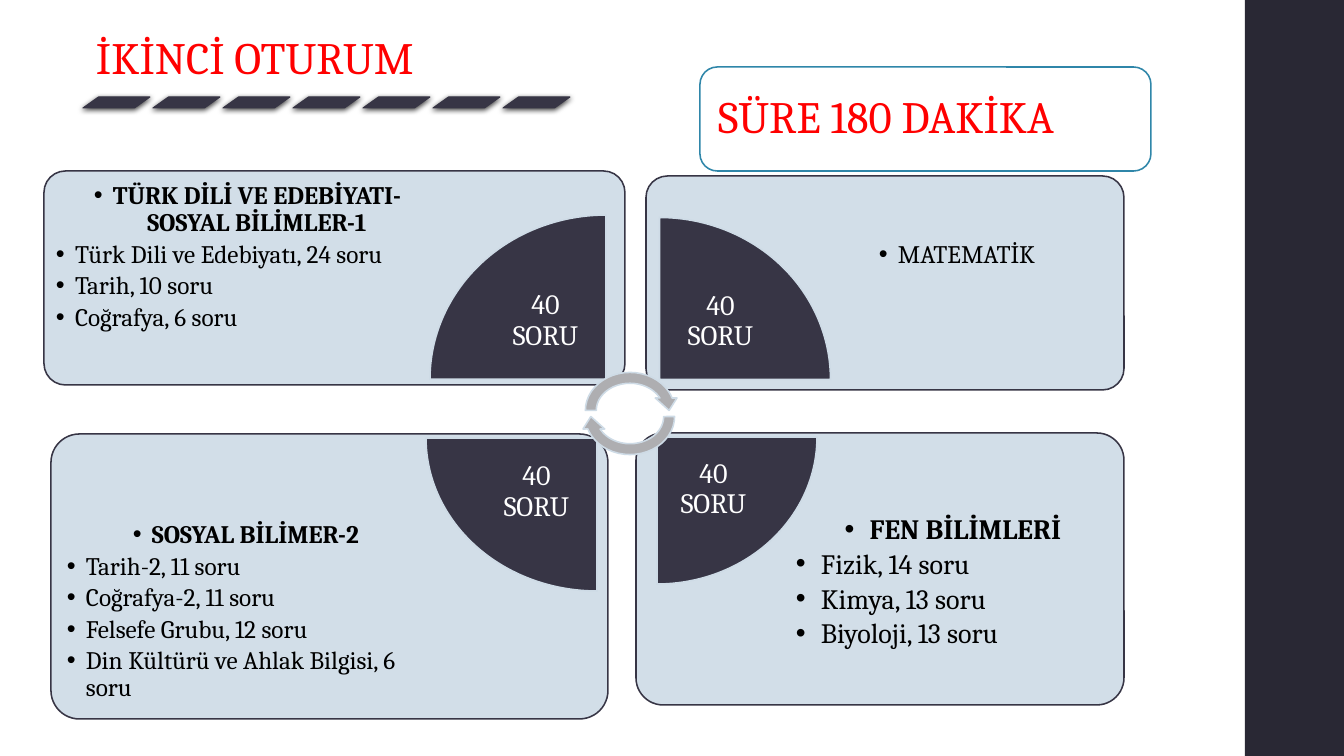
from dataclasses import dataclass

from lxml.etree import SubElement
from pptx import Presentation
from pptx.dml.color import RGBColor
from pptx.enum.shapes import MSO_SHAPE
from pptx.enum.text import MSO_ANCHOR, MSO_AUTO_SIZE, PP_ALIGN
from pptx.oxml.ns import qn
from pptx.util import Pt


@dataclass(frozen=True)
class Theme:
    font: str = "Cambria"
    dark: str = "373545"
    band: str = "292834"
    pale: str = "CEDBE6"
    gray: str = "AEAEB1"
    teal: str = "2F86A9"
    red: str = "FF0000"
    white: str = "FFFFFF"
    black: str = "000000"
    head: int = 32
    large: int = 20
    small: int = 18
    edge: float = 1.1


THEME = Theme()
SCALE = 914400 / 100.8


def px(num):
    return round(num * SCALE)


def shift(box, part):
    """Place a part, given relative to a box, on the slide."""
    return box[0] + part[0], box[1] + part[1], part[2], part[3]


def draw(slide, kind, box, fill, line=None, width=THEME.edge, turn=0):
    shape = slide.shapes.add_shape(kind, *map(px, box))
    shape.shadow.inherit = False
    shape.rotation = turn
    shape.fill.solid()
    shape.fill.fore_color.rgb = RGBColor.from_string(fill)
    if line:
        shape.line.color.rgb = RGBColor.from_string(line)
        shape.line.width = Pt(width)
    else:
        shape.line.fill.background()
    return shape


def place(shape, box):
    """Set a placeholder's box and bring it to the front."""
    shape.left, shape.top, shape.width, shape.height = map(px, box)
    shape.element.getparent().append(shape.element)


def setup(shape, inset, anchor):
    frame = shape.text_frame
    frame.word_wrap = True
    frame.auto_size = MSO_AUTO_SIZE.NONE
    frame.vertical_anchor = anchor
    frame.margin_left = frame.margin_right = px(inset)
    frame.margin_top = frame.margin_bottom = px(inset)
    return frame


def style(para, size, color, align, bold=False, after=0):
    para.alignment = align
    para.line_spacing = 0.9
    para.space_before = Pt(0)
    para.space_after = Pt(after)
    for run in para.runs:
        run.font.name = THEME.font
        run.font.size = Pt(size)
        run.font.bold = bold
        run.font.color.rgb = RGBColor.from_string(color)


def write(shape, text, inset, size, color, align, anchor=MSO_ANCHOR.MIDDLE):
    frame = setup(shape, inset, anchor)
    frame.text = text
    style(frame.paragraphs[0], size, color, align)


def bullet(para, indent):
    para.level = 1
    props = para._p.get_or_add_pPr()
    props.set("marL", str(px(indent)))
    props.set("indent", str(-px(indent)))
    SubElement(props, qn("a:buFont")).set("typeface", "Arial")
    SubElement(props, qn("a:buChar")).set("char", "•")


def fill_list(shape, items, size, inset, indent, anchor, bold):
    """Write a centred heading with its list below."""
    frame = setup(shape, inset, anchor)
    frame.text = "\n".join(items)
    for i, para in enumerate(frame.paragraphs):
        bullet(para, indent)
        align = PP_ALIGN.LEFT if i else PP_ALIGN.CENTER
        style(para, size, THEME.black, align, bold and i == 0, size / 6)


def add_card(slide, holder, box, body, wedge, label, turn, items,
             size=THEME.small, inset=10, indent=19,
             anchor=MSO_ANCHOR.TOP, bold=True):
    # Panel
    panel = draw(slide, MSO_SHAPE.ROUNDED_RECTANGLE, box, THEME.pale, THEME.dark)
    panel.adjustments[0] = 0.1
    color = panel.element.spPr.find(qn("a:solidFill"))[0]
    SubElement(color, qn("a:alpha")).set("val", "90000")
    # List
    place(holder, shift(box, body))
    fill_list(holder, items, size, inset, indent, anchor, bold)
    # Quarter with its count
    draw(slide, MSO_SHAPE.PIE_WEDGE, shift(box, wedge), THEME.dark,
         THEME.pale, turn=turn)
    count = slide.shapes.add_textbox(*map(px, shift(box, label)))
    write(count, "40 SORU", 16, THEME.large, THEME.white, PP_ALIGN.CENTER)


def add_cycle(slide, box):
    for drop, turn in ((0, 0), (6, 180)):
        draw(slide, MSO_SHAPE.CIRCULAR_ARROW, shift(box, (0, drop, *box[2:])),
             THEME.gray, THEME.pale, turn=turn)


def add_head(slide, box):
    # Title
    title = slide.shapes.title
    place(title, box)
    write(title, "İKİNCİ OTURUM", 13, THEME.head, THEME.red,
          PP_ALIGN.LEFT, MSO_ANCHOR.BOTTOM)
    # Row of slanted dashes
    for i in range(7):
        dash = draw(slide, MSO_SHAPE.PARALLELOGRAM,
                    shift(box, (70 * i, box[3], 67, 11)),
                    THEME.dark, THEME.dark, 0.75)
        dash.adjustments[0] = 1.41
        effect = dash.element.spPr.find(qn("a:effectLst"))
        shade = SubElement(effect, qn("a:outerShdw"), blurRad=str(Pt(4)),
                           dist=str(Pt(1.2)), dir="5400000", rotWithShape="0")
        color = SubElement(shade, qn("a:srgbClr"), val=THEME.black)
        SubElement(color, qn("a:alpha"), val="75000")


def add_time(slide, box):
    draw(slide, MSO_SHAPE.ROUNDED_RECTANGLE, box, THEME.white, THEME.teal)
    inner = shift(box, (5, 5, box[2] - 10, box[3] - 10))
    text = slide.shapes.add_textbox(*map(px, inner))
    write(text, "SÜRE 180 DAKİKA", 13, THEME.head, THEME.red, PP_ALIGN.LEFT)


def main():
    deck = Presentation()
    deck.slide_width, deck.slide_height = px(1344), px(756)
    # The comparison layout holds a title and four text bodies
    slide = deck.slides.add_slide(deck.slide_layouts[4])
    hold = slide.placeholders

    # Side band
    draw(slide, MSO_SHAPE.RECTANGLE, (1245, 0, 99, 756), THEME.band)

    # Four subject cards
    add_card(slide, hold[4], (636, 433, 488, 272), (152, 74, 330, 193),
             (21, 4, 160, 147), (21, 4, 113, 104), 180,
             ["FEN BİLİMLERİ", "Fizik, 14 soru", "Kimya, 13 soru",
              "Biyoloji, 13 soru"], size=THEME.large, inset=8, indent=25)
    add_card(slide, hold[3], (51, 434, 557, 285), (6, 78, 378, 202),
             (384, -5, 153, 171), (425, 4, 121, 108), 270,
             ["SOSYAL BİLİMER-2", "Tarih-2, 11 soru", "Coğrafya-2, 11 soru",
              "Felsefe Grubu, 12 soru", "Din Kültürü ve Ahlak Bilgisi, 6 soru"])
    add_card(slide, hold[2], (646, 176, 478, 214), (148, 4, 326, 151),
             (18, 37, 162, 171), (14, 88, 121, 115), 90,
             ["MATEMATİK"], anchor=MSO_ANCHOR.MIDDLE, bold=False)
    add_card(slide, hold[1], (44, 171, 581, 214), (5, 5, 397, 151),
             (386, 44, 176, 164), (439, 92, 125, 116), 0,
             ["TÜRK DİLİ VE EDEBİYATI-SOSYAL BİLİMLER-1",
              "Türk Dili ve Edebiyatı, 24 soru", "Tarih, 10 soru",
              "Coğrafya, 6 soru"], inset=7)

    add_cycle(slide, (580, 367, 100, 87))
    add_head(slide, (83, 51, 497, 46))
    add_time(slide, (700, 67, 451, 104))
    deck.save("out.pptx")


if __name__ == "__main__":
    main()
